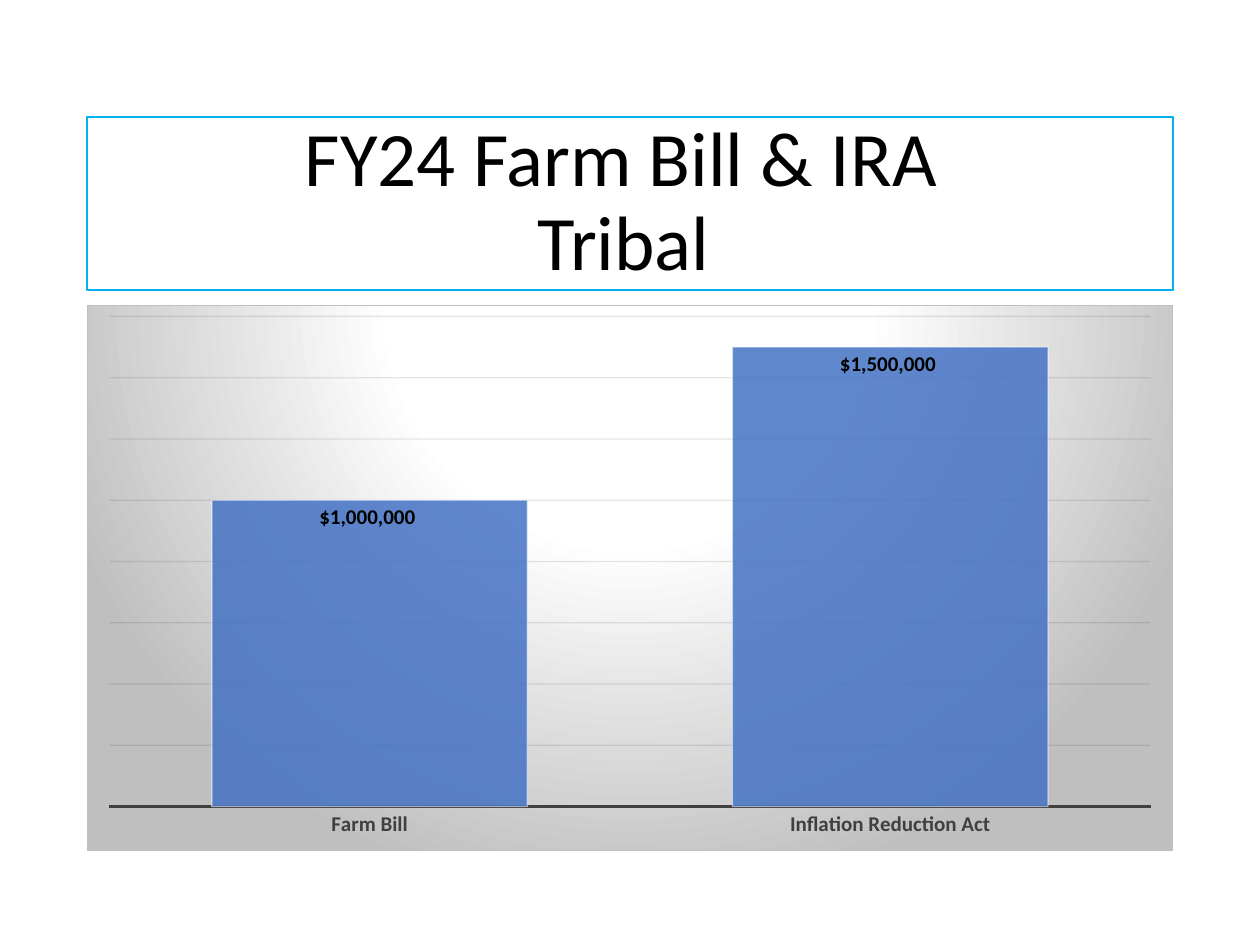
import pptx
import pptx.chart.data
import pptx.dml.color
import pptx.enum.chart
import pptx.enum.text
import pptx.oxml
import pptx.oxml.ns
import pptx.util

TITLE_LINES = [[("FY24 Farm Bill & IRA ", "title")], [("Tribal", "title"), (" ", "title_end")]]
FUNDING = {"Farm Bill": 1000000, "Inflation Reduction Act": 1500000}
MONEY_FORMAT = '"$"#,##0_);[Red]\\("$"#,##0\\)'

SLIDE_SIZE = (1260, 945)
TITLE_AREA = (87, 117, 1086, 173)
CHART_AREA = (87, 305, 1086, 546)
PLOT_LAYOUT = {"x": 0.02, "y": 0.02, "w": 0.96, "h": 0.9}
PX_PER_INCH = 126

THEME = {
    "font": "Calibri",
    "text": "000000",
    "title_line": "00B0F0",
    "bar": "4472C4",
    "bar_line": "FFFFFF",
    "axis": "404040",
    "grid": "0D0D0D",
    "border": "BFBFBF",
    "gradient": [(0, "FFFFFF"), (39, "FFFFFF"), (100, "BFBFBF")],
    "sizes": {"title": 44, "title_end": 32, "chart": 10, "label": 12},
}


def px(value):
    return pptx.util.Emu(round(value * 914400 / PX_PER_INCH))


def color(name):
    return pptx.dml.color.RGBColor.from_string(THEME[name])


def style_font(font, size, tint, bold=False):
    font.name = THEME["font"]
    font.size = pptx.util.Pt(THEME["sizes"][size])
    font.color.rgb = color(tint)
    font.bold = bold


def style_line(line, tint, width=0.75):
    line.color.rgb = color(tint)
    line.width = pptx.util.Pt(width)


def set_alpha(element, percent):
    for tint in element.iter(pptx.oxml.ns.qn("a:srgbClr")):
        alpha = tint.makeelement(pptx.oxml.ns.qn("a:alpha"), {"val": str(percent * 1000)})
        tint.append(alpha)


def add_title(page):
    box = page.shapes.title
    box.left, box.top, box.width, box.height = map(px, TITLE_AREA)
    style_line(box.line, "title_line")
    frame = box.text_frame
    frame.word_wrap = True
    frame.auto_size = pptx.enum.text.MSO_AUTO_SIZE.NONE
    frame.vertical_anchor = pptx.enum.text.MSO_ANCHOR.MIDDLE
    para = frame.paragraphs[0]
    para.alignment = pptx.enum.text.PP_ALIGN.CENTER
    para.line_spacing = 0.9
    for index, spans in enumerate(TITLE_LINES):
        if index:
            para.add_line_break()
        for text, size in spans:
            span = para.add_run()
            span.text = text
            style_font(span.font, size, "text")


def format_chart_area(chart):
    stops = "".join(
        f'<a:gs pos="{place * 1000}"><a:srgbClr val="{tint}"/></a:gs>'
        for place, tint in THEME["gradient"]
    )
    area = pptx.oxml.parse_xml(
        f'<c:spPr {pptx.oxml.ns.nsdecls("c", "a")}><a:gradFill><a:gsLst>{stops}</a:gsLst>'
        '<a:path path="circle"><a:fillToRect l="50000" t="-80000" r="50000" b="180000"/></a:path>'
        f'</a:gradFill><a:ln w="9525"><a:solidFill><a:srgbClr val="{THEME["border"]}"/>'
        "</a:solidFill></a:ln></c:spPr>"
    )
    root = chart.element if hasattr(chart, "element") else chart._chartSpace
    root.find(pptx.oxml.ns.qn("c:chart")).addnext(area)
    plot_area = root.find(".//" + pptx.oxml.ns.qn("c:plotArea"))
    for layout in plot_area.findall(pptx.oxml.ns.qn("c:layout")):
        plot_area.remove(layout)
    places = "".join(f'<c:{key} val="{value}"/>' for key, value in PLOT_LAYOUT.items())
    plot_area.insert(0, pptx.oxml.parse_xml(
        f'<c:layout {pptx.oxml.ns.nsdecls("c")}><c:manualLayout><c:layoutTarget val="inner"/>'
        f'<c:xMode val="edge"/><c:yMode val="edge"/>{places}</c:manualLayout></c:layout>'
    ))


def add_funding_chart(page):
    data = pptx.chart.data.CategoryChartData(number_format=MONEY_FORMAT)
    data.categories = list(FUNDING)
    data.add_series("Series 1", list(FUNDING.values()))
    chart = page.shapes.add_chart(
        pptx.enum.chart.XL_CHART_TYPE.COLUMN_CLUSTERED, *map(px, CHART_AREA), data
    ).chart
    chart.has_legend = False
    chart.has_title = False
    style_font(chart.font, "chart", "text")
    format_chart_area(chart)

    plot = chart.plots[0]
    plot.gap_width = 65
    plot.vary_by_categories = False
    bars = plot.series[0]
    bars.format.fill.solid()
    bars.format.fill.fore_color.rgb = color("bar")
    bars_style = bars.format.fill._xPr
    set_alpha(bars_style, 85)
    style_line(bars.format.line, "bar_line")
    set_alpha(bars_style.find(pptx.oxml.ns.qn("a:ln")), 50)

    labels = bars.data_labels
    labels.show_value = True
    labels.position = pptx.enum.chart.XL_LABEL_POSITION.INSIDE_END
    labels.number_format = MONEY_FORMAT
    labels.number_format_is_linked = False
    style_font(labels.font, "label", "text", bold=True)

    categories = chart.category_axis
    categories.major_tick_mark = pptx.enum.chart.XL_TICK_MARK.NONE
    style_font(categories.tick_labels.font, "label", "axis", bold=True)
    style_line(categories.format.line, "axis", 1.5)

    amounts = chart.value_axis
    amounts.visible = False
    amounts.minimum_scale = 0
    amounts.maximum_scale = 1600000
    amounts.major_unit = 200000
    amounts.has_major_gridlines = True
    grid = amounts.major_gridlines
    style_line(grid.format.line, "grid")
    set_alpha(grid._xAx.find(pptx.oxml.ns.qn("c:majorGridlines")), 10)


def main():
    deck = pptx.Presentation()
    deck.slide_width, deck.slide_height = map(px, SLIDE_SIZE)
    page = deck.slides.add_slide(deck.slide_layouts[5])
    add_title(page)
    add_funding_chart(page)
    deck.save("out.pptx")


if __name__ == "__main__":
    main()
